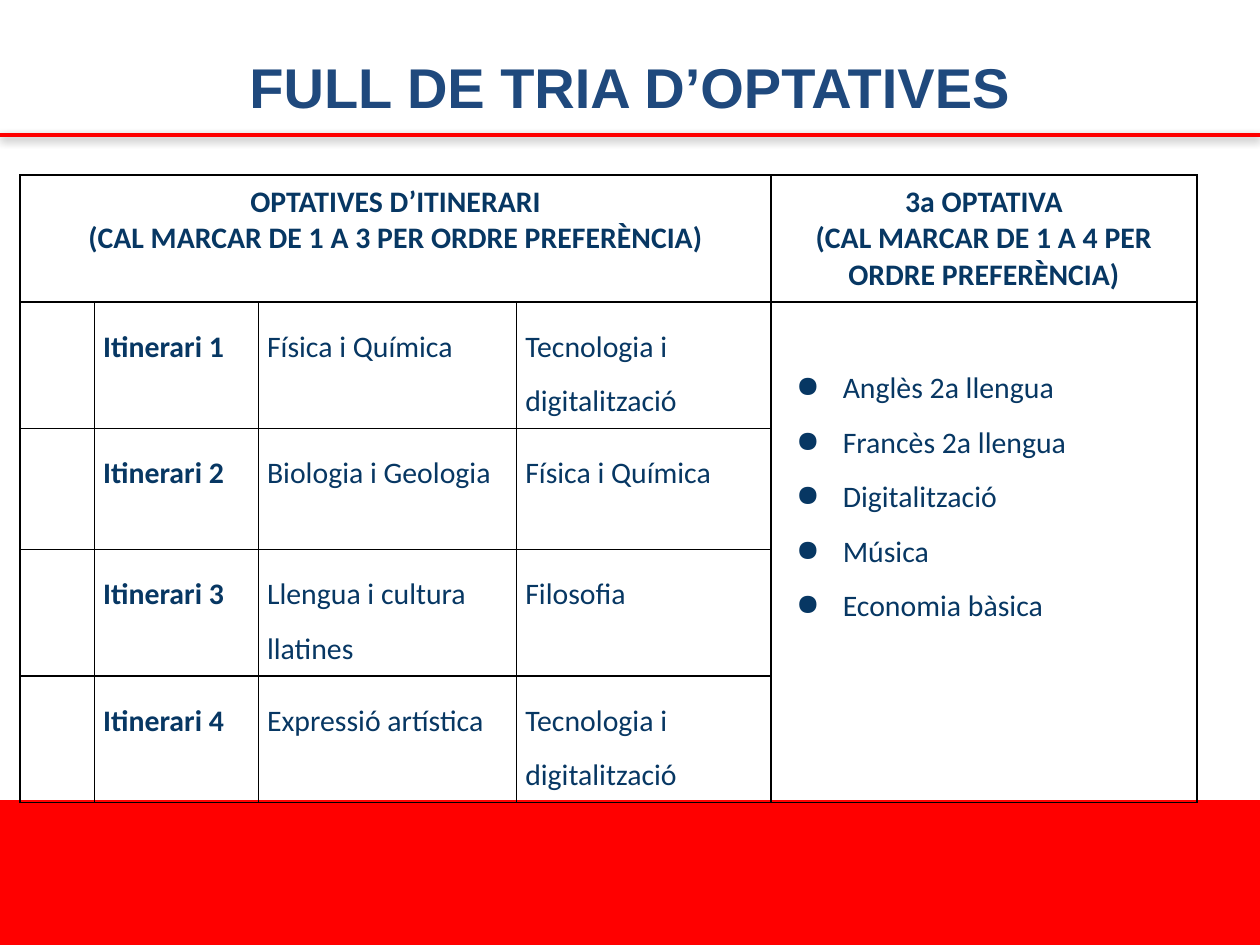
from dataclasses import dataclass

from lxml.etree import SubElement
from pptx import Presentation
from pptx.dml.color import RGBColor
from pptx.enum.shapes import MSO_CONNECTOR, MSO_SHAPE
from pptx.enum.text import MSO_ANCHOR, PP_ALIGN
from pptx.oxml.ns import qn
from pptx.util import Inches, Pt


@dataclass(frozen=True)
class Theme:
    """Colours, fonts and type sizes of the slide."""
    red: str = "FF0000"
    head: str = "1F497D"
    ink: str = "073763"
    rule: str = "000000"
    head_font: str = "Arial"
    body_font: str = "Calibri"
    head_size: int = 32
    body_size: int = 17


def rgb(code):
    """Turn a hex code into a colour."""
    return RGBColor.from_string(code)


def node(base, tag, **attrs):
    """Add a drawing element under base."""
    return SubElement(base, qn("a:" + tag), {k: str(v) for k, v in attrs.items()})


def write(frame, text, font, size, color, bold=False, align=PP_ALIGN.LEFT,
          space=None, bullet=None):
    """Fill a text frame, one paragraph for each line of text."""
    for i, line in enumerate(text.split("\n")):
        para = frame.paragraphs[0] if i == 0 else frame.add_paragraph()
        if bullet:
            props = para._p.get_or_add_pPr()
            props.set("marL", str(Inches(0.5)))
            props.set("indent", str(Inches(-0.37)))
            node(node(props, "buClr"), "srgbClr", val=color)
            node(props, "buChar", char=bullet)
        para.alignment = align
        para.line_spacing = space
        run = para.add_run()
        run.text = line
        run.font.name, run.font.size, run.font.bold = font, Pt(size), bold
        run.font.color.rgb = rgb(color)


class Deck:
    """Holds the style and the current slide."""

    def __init__(self, theme):
        """Start a deck with one title-only slide."""
        self.theme = theme
        self.file = Presentation()
        self.file.slide_width, self.file.slide_height = Inches(10), Inches(7.5)
        self.slide = self.file.slides.add_slide(self.file.slide_layouts[5])

    def title(self, text, x, y, w, h):
        """Place and fill the title."""
        t, box = self.theme, self.slide.shapes.title
        box.left, box.top, box.width, box.height = map(Inches, (x, y, w, h))
        box.text_frame.vertical_anchor = MSO_ANCHOR.MIDDLE
        write(box.text_frame, text, t.head_font, t.head_size, t.head,
              bold=True, align=PP_ALIGN.CENTER)

    def line(self, x, y, end):
        """Draw a level red line with a soft shadow."""
        wire = self.slide.shapes.add_connector(
            MSO_CONNECTOR.STRAIGHT, Inches(x), Inches(y), Inches(end), Inches(y))
        wire.line.color.rgb = rgb(self.theme.red)
        wire.line.width = Pt(2)
        glow = node(node(wire._element.spPr, "effectLst"), "outerShdw",
                    blurRad=Pt(5), dist=Pt(1.6), dir=5400000, rotWithShape=0)
        node(node(glow, "srgbClr", val=self.theme.rule), "alpha", val=37000)

    def band(self, x, y, w, h):
        """Draw a plain red band."""
        box = self.slide.shapes.add_shape(
            MSO_SHAPE.RECTANGLE, *map(Inches, (x, y, w, h)))
        box.shadow.inherit = False
        box.fill.solid()
        box.fill.fore_color.rgb = rgb(self.theme.red)
        box.line.fill.background()

    def grid(self, x, y, cols, rows):
        """Add a clear table with thin black borders."""
        table = self.slide.shapes.add_table(
            len(rows), len(cols), *map(Inches, (x, y, sum(cols), sum(rows)))).table
        table.first_row = table.horz_banding = False
        for col, width in zip(table.columns, cols):
            col.width = Inches(width)
        for row, height in zip(table.rows, rows):
            row.height = Inches(height)
        for cell in table.iter_cells():
            cell.margin_left = cell.margin_right = Inches(0.07)
            cell.margin_top = cell.margin_bottom = Inches(0.07)
            for side in ("lnL", "lnR", "lnT", "lnB"):
                edge = node(cell._tc.get_or_add_tcPr(), side, w=Pt(1))
                node(node(edge, "solidFill"), "srgbClr", val=self.theme.rule)
            cell.fill.background()
        return table

    def cell(self, cell, text, **style):
        """Write body text in a table cell."""
        t = self.theme
        write(cell.text_frame, text, t.body_font, t.body_size, t.ink, **style)


HEADS = {
    0: "OPTATIVES D’ITINERARI\n(CAL MARCAR DE 1 A 3 PER ORDRE PREFERÈNCIA)",
    4: "3a OPTATIVA\n(CAL MARCAR DE 1 A 4 PER ORDRE PREFERÈNCIA)",
}
PATHS = [
    ("Física i Química", "Tecnologia i digitalització"),
    ("Biologia i Geologia", "Física i Química"),
    ("Llengua i cultura llatines", "Filosofia"),
    ("Expressió artística", "Tecnologia i digitalització"),
]
THIRD = ["Anglès 2a llengua", "Francès 2a llengua", "Digitalització",
         "Música", "Economia bàsica"]


def main():
    """Build and save the slide."""
    deck = Deck(Theme())
    deck.line(0, 1.07, 10)
    deck.band(0, 6.35, 10, 1.15)
    deck.title("FULL DE TRIA D’OPTATIVES", 0.5, 0.22, 9, 0.93)

    table = deck.grid(0.16, 1.39, [0.59, 1.3, 2.05, 2.02, 3.38],
                      [0.94] + [0.96] * len(PATHS))
    table.cell(0, 0).merge(table.cell(0, 3))
    table.cell(1, 4).merge(table.cell(len(PATHS), 4))
    for col, text in HEADS.items():
        deck.cell(table.cell(0, col), text, bold=True, align=PP_ALIGN.CENTER)
    for row, pair in enumerate(PATHS, 1):
        for col, text in enumerate((f"Itinerari {row}", *pair), 1):
            deck.cell(table.cell(row, col), text, bold=col == 1, space=1.5)
    third = table.cell(1, 4)
    third.margin_top = Inches(0.4)
    deck.cell(third, "\n".join(THIRD), space=1.5, bullet="●")
    deck.file.save("out.pptx")


if __name__ == "__main__":
    main()
